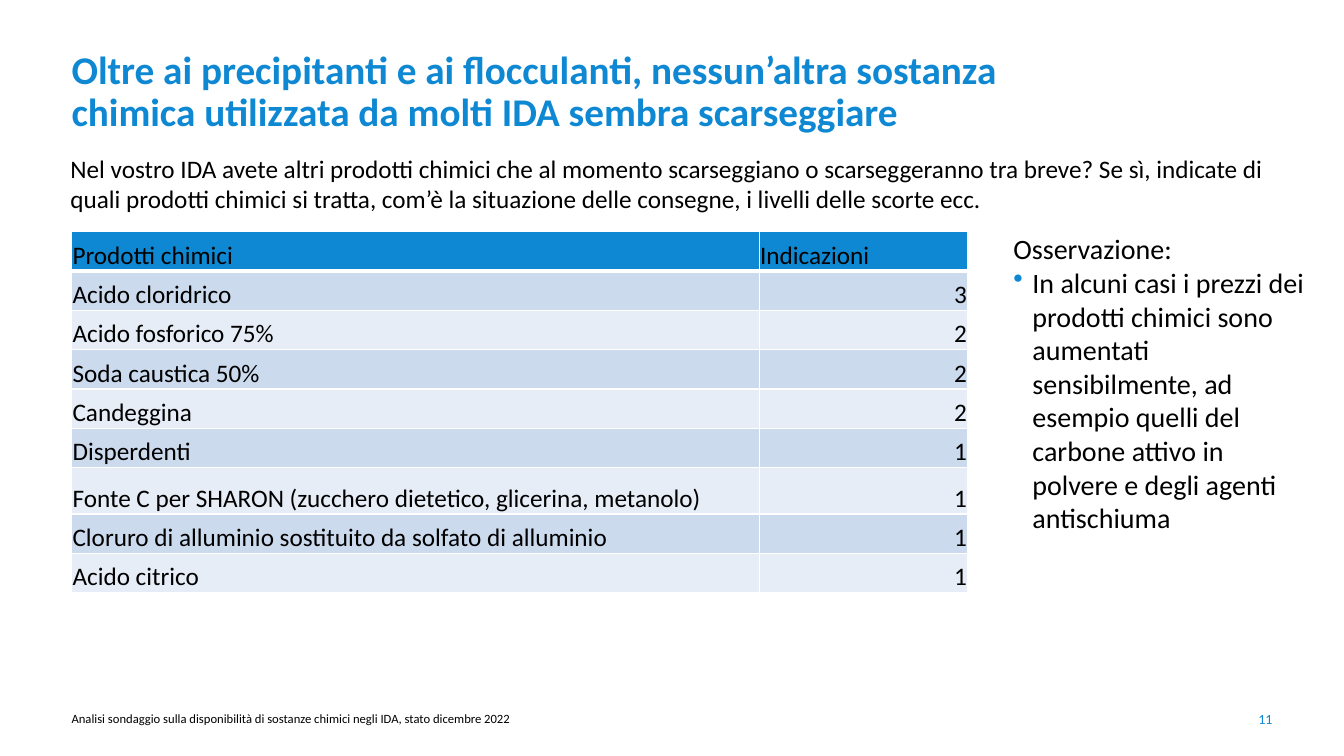
from dataclasses import dataclass

from lxml import etree
from pptx import Presentation
from pptx.dml.color import RGBColor
from pptx.enum.text import MSO_ANCHOR, PP_ALIGN
from pptx.oxml.ns import qn
from pptx.util import Inches, Pt

TOP, BOTTOM = MSO_ANCHOR.TOP, MSO_ANCHOR.BOTTOM
LEFT, RIGHT = PP_ALIGN.LEFT, PP_ALIGN.RIGHT


@dataclass(frozen=True)
class Theme:
    font: str = "Calibri"
    blue: str = "0E88D2"
    black: str = "000000"
    white: str = "FFFFFF"
    odd_row: str = "CCDAEE"
    even_row: str = "E7EDF7"
    title_size: int = 28
    note_size: int = 20
    body_size: int = 18
    number_size: int = 10
    footer_size: int = 9


theme = Theme()


def style(paragraph, size, color=theme.black, bold=False, align=LEFT):
    paragraph.alignment = align
    paragraph.font.name = theme.font
    paragraph.font.size = Pt(size)
    paragraph.font.bold = bold
    paragraph.font.color.rgb = RGBColor.from_string(color)


def add_text(box, text, inset=(0, 0), anchor=TOP):
    """Add a wrapping text box; box is left, top, width, height in inches."""
    frame = slide.shapes.add_textbox(*map(Inches, box)).text_frame
    frame.word_wrap = True
    frame.vertical_anchor = anchor
    frame.margin_left = frame.margin_right = Inches(inset[0])
    frame.margin_top = frame.margin_bottom = Inches(inset[1])
    frame.text = text
    return frame.paragraphs


deck = Presentation()
deck.slide_width, deck.slide_height = Inches(13.33), Inches(7.5)
slide = deck.slides.add_slide(deck.slide_layouts[6])

# Title
title = add_text(
    (0.71, 0.45, 9.73, 0.89),
    "Oltre ai precipitanti e ai flocculanti, nessun’altra sostanza chimica "
    "utilizzata da molti IDA sembra scarseggiare",
    anchor=BOTTOM,
)[0]
title.line_spacing = 0.9
style(title, theme.title_size, theme.blue, bold=True)

# Footer and page number
footer = add_text(
    (0.71, 7.05, 8.61, 0.16),
    "Analisi sondaggio sulla disponibilità di sostanze chimici negli IDA, "
    "stato dicembre 2022",
)[0]
style(footer, theme.footer_size)
page_number = add_text((11.8, 7.05, 0.82, 0.16), "11")[0]
style(page_number, theme.number_size, theme.blue, align=RIGHT)

# Survey question
question = add_text(
    (0.6, 1.47, 12.28, 0.71),
    "Nel vostro IDA avete altri prodotti chimici che al momento scarseggiano "
    "o scarseggeranno tra breve? Se sì, indicate di quali prodotti chimici "
    "si tratta, com’è la situazione delle consegne, i livelli delle scorte ecc.",
    inset=(0.1, 0.05),
)[0]
style(question, theme.body_size)

# Table of chemicals
chemicals = [
    ("Prodotti chimici", "Indicazioni"),
    ("Acido cloridrico", 3),
    ("Acido fosforico 75%", 2),
    ("Soda caustica 50%", 2),
    ("Candeggina", 2),
    ("Disperdenti", 1),
    ("Fonte C per SHARON (zucchero dietetico, glicerina, metanolo)", 1),
    ("Cloruro di alluminio sostituito da solfato di alluminio", 1),
    ("Acido citrico", 1),
]
ROW_HEIGHT, TALL_ROW, TALL_HEIGHT = 0.39, 6, 0.46
answers = slide.shapes.add_table(
    len(chemicals), 2, Inches(0.71), Inches(2.3), Inches(8.89), Inches(3.55)
).table
for column, width in zip(answers.columns, (6.82, 2.07)):
    column.width = Inches(width)

for r, entry in enumerate(chemicals):
    answers.rows[r].height = Inches(TALL_HEIGHT if r == TALL_ROW else ROW_HEIGHT)
    if r == 0:
        row_fill = theme.blue
    else:
        row_fill = theme.odd_row if r % 2 else theme.even_row
    for c, value in enumerate(entry):
        cell = answers.cell(r, c)
        cell.text = str(value)
        cell.vertical_anchor = BOTTOM
        cell.margin_left = cell.margin_right = cell.margin_top = Inches(0.01)
        cell.margin_bottom = 0
        cell.fill.solid()
        cell.fill.fore_color.rgb = RGBColor.from_string(row_fill)
        style(cell.text_frame.paragraphs[0], theme.body_size,
              align=RIGHT if r and c else LEFT)

        # White borders, thicker around the foot of the header
        top_width = 3 if r == 1 else 1
        bottom_width = 3 if r == 0 else 1
        borders = (("a:lnL", 1), ("a:lnR", 1),
                   ("a:lnT", top_width), ("a:lnB", bottom_width))
        properties = cell._tc.get_or_add_tcPr()
        for position, (side, width) in enumerate(borders):
            border = etree.Element(qn(side), w=str(Pt(width)))
            solid = etree.SubElement(border, qn("a:solidFill"))
            etree.SubElement(solid, qn("a:srgbClr"), val=theme.white)
            properties.insert(position, border)

# Observation
heading, remark = add_text(
    (10.05, 2.3, 2.96, 1.21),
    "Osservazione:\n"
    "In alcuni casi i prezzi dei prodotti chimici sono aumentati "
    "sensibilmente, ad esempio quelli del carbone attivo in polvere e degli "
    "agenti antischiuma",
)
indent = Inches(0.19)
remark_properties = remark._p.get_or_add_pPr()
remark_properties.set("marL", str(indent))
remark_properties.set("indent", str(-indent))
bullet_color = etree.SubElement(remark_properties, qn("a:buClr"))
etree.SubElement(bullet_color, qn("a:srgbClr"), val=theme.blue)
etree.SubElement(remark_properties, qn("a:buChar"), char="•")
for paragraph in (heading, remark):
    style(paragraph, theme.note_size)

deck.save("out.pptx")
